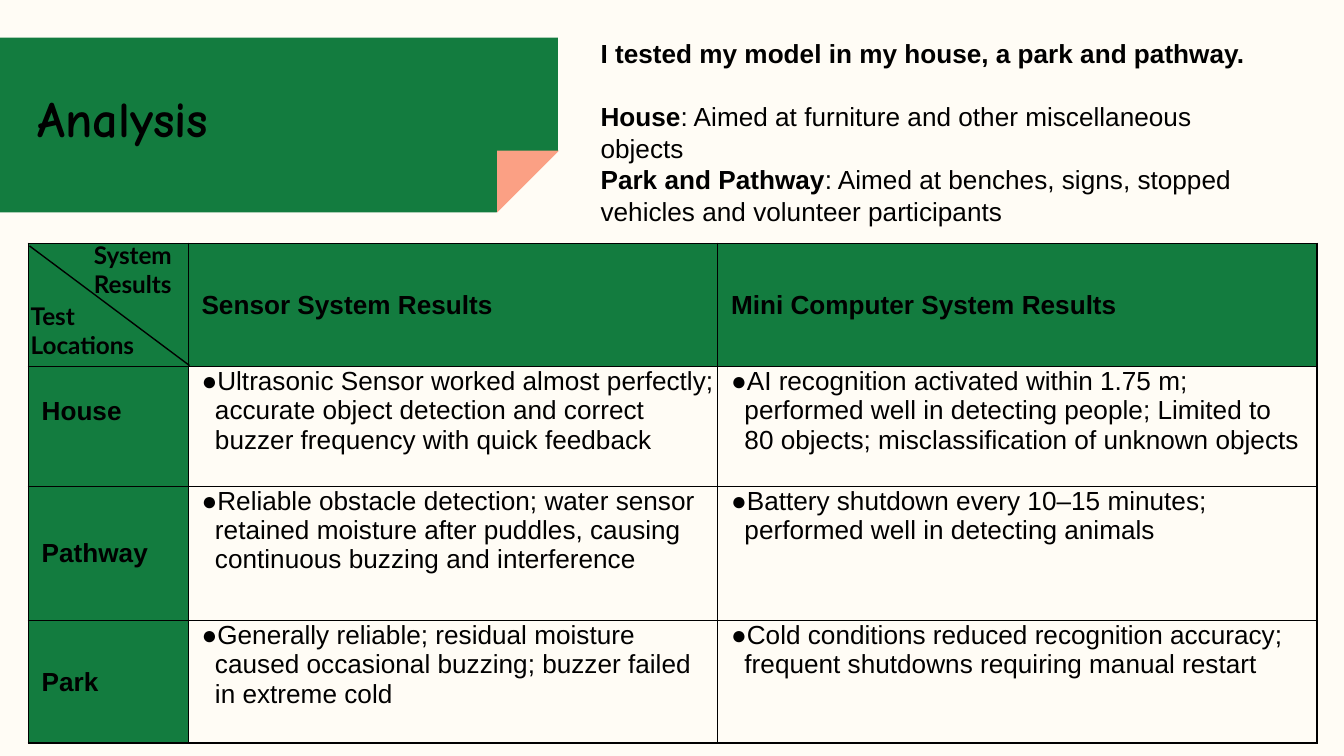
from lxml import etree
from pptx import Presentation
from pptx.dml.color import RGBColor
from pptx.enum.shapes import MSO_CONNECTOR, MSO_SHAPE
from pptx.enum.text import MSO_ANCHOR
from pptx.oxml.ns import qn
from pptx.util import Inches, Pt

SNIPPED, TRIANGLE = MSO_SHAPE.SNIP_1_RECTANGLE, MSO_SHAPE.RIGHT_TRIANGLE
STRAIGHT = MSO_CONNECTOR.STRAIGHT
TOP, MIDDLE = MSO_ANCHOR.TOP, MSO_ANCHOR.MIDDLE

CREAM = RGBColor(0xFF, 0xFC, 0xF5)
GREEN = RGBColor(0x13, 0x7C, 0x3F)
SALMON = RGBColor(0xFB, 0xA0, 0x84)
BLACK = RGBColor(0, 0, 0)

COLUMN_WIDTHS = [1.19, 3.94, 4.46]
ROW_HEIGHTS = [0.92, 0.89, 1, 0.91]
RESULTS = [
    ["", "Sensor System Results", "Mini Computer System Results"],
    ["House",
     "Ultrasonic Sensor worked almost perfectly; accurate object detection "
     "and correct buzzer frequency with quick feedback",
     "AI recognition activated within 1.75 m; performed well in detecting "
     "people; Limited to 80 objects; misclassification of unknown objects"],
    ["Pathway",
     "Reliable obstacle detection; water sensor retained moisture after "
     "puddles, causing continuous buzzing and interference",
     "Battery shutdown every 10–15 minutes; performed well in detecting animals"],
    ["Park",
     "Generally reliable; residual moisture caused occasional buzzing; "
     "buzzer failed in extreme cold",
     "Cold conditions reduced recognition accuracy; frequent shutdowns "
     "requiring manual restart"],
]
# Each line is a bold lead and its plain continuation
INTRO = [
    ("I tested my model in my house, a park and pathway.", ""),
    ("House", ": Aimed at furniture and other miscellaneous objects"),
    ("Park and Pathway", ": Aimed at benches, signs, stopped vehicles and "
     "volunteer participants"),
]


def style_font(font, size, name="Arial", bold=None):
    font.size, font.name, font.bold = Pt(size), name, bold
    font.color.rgb = BLACK


def set_margins(target, left=0.1, top=0.1, right=0.1, bottom=0.1):
    target.margin_left, target.margin_top = Inches(left), Inches(top)
    target.margin_right, target.margin_bottom = Inches(right), Inches(bottom)


def add_flipped_shape(slide, kind, left, top, width, height, color):
    """Turn a shape by 180 degrees and mirror it, so it stands upside down."""
    shape = slide.shapes.add_shape(
        kind, Inches(left), Inches(top), Inches(width), Inches(height))
    shape.shadow.inherit = False
    shape.fill.solid()
    shape.fill.fore_color.rgb = color
    shape.line.fill.background()
    shape.rotation = 180
    shape._element.spPr.find(qn("a:xfrm")).set("flipH", "1")
    return shape


def add_text_frame(slide, left, top, width, height):
    box = slide.shapes.add_textbox(
        Inches(left), Inches(top), Inches(width), Inches(height))
    frame = box.text_frame
    frame.word_wrap = True
    set_margins(frame)
    return frame


def add_label(slide, text, left, top, width, height, size, font_name):
    paragraph = add_text_frame(slide, left, top, width, height).paragraphs[0]
    paragraph.text = text
    style_font(paragraph.font, size, font_name, True)


def add_intro(slide):
    frame = add_text_frame(slide, 4.37, 0.18, 5.25, 1.69)
    for index, (lead, detail) in enumerate(INTRO):
        paragraph = frame.add_paragraph() if index else frame.paragraphs[0]
        if index == 1:
            paragraph.space_before = Pt(17)
        style_font(paragraph.font, 14)
        run = paragraph.add_run()
        run.text = lead
        run.font.bold = True
        if detail:
            paragraph.add_run().text = detail


def add_bullet(paragraph):
    properties = paragraph._p.get_or_add_pPr()
    properties.set("marL", str(Inches(0.1)))
    properties.set("indent", str(-Inches(0.15)))
    color = etree.SubElement(properties, qn("a:buClr"))
    etree.SubElement(color, qn("a:srgbClr"), val=str(BLACK))
    etree.SubElement(properties, qn("a:buFont"), typeface="Arial")
    etree.SubElement(properties, qn("a:buChar"), char="●")


def add_borders(cell):
    properties = cell._tc.get_or_add_tcPr()
    for index, side in enumerate(("lnL", "lnR", "lnT", "lnB")):
        line = etree.Element(qn("a:" + side), w=str(Pt(0.75)))
        fill = etree.SubElement(line, qn("a:solidFill"))
        etree.SubElement(fill, qn("a:srgbClr"), val=str(BLACK))
        properties.insert(index, line)


def fill_cell(cell, text, is_heading):
    paragraph = cell.text_frame.paragraphs[0]
    paragraph.text = text
    if is_heading:
        cell.fill.solid()
        cell.fill.fore_color.rgb = GREEN
        cell.vertical_anchor = MIDDLE
        set_margins(cell)
    else:
        cell.fill.background()
        cell.vertical_anchor = TOP
        set_margins(cell, top=0)
        add_bullet(paragraph)
    style_font(paragraph.font, 14, bold=is_heading)
    add_borders(cell)


def add_results_table(slide):
    table = slide.shapes.add_table(
        len(ROW_HEIGHTS), len(COLUMN_WIDTHS), Inches(0.21), Inches(1.81),
        Inches(sum(COLUMN_WIDTHS)), Inches(sum(ROW_HEIGHTS))).table
    table.horz_banding = False
    for column, width in zip(table.columns, COLUMN_WIDTHS):
        column.width = Inches(width)
    for row, height in zip(table.rows, ROW_HEIGHTS):
        row.height = Inches(height)
    for r, texts in enumerate(RESULTS):
        for c, text in enumerate(texts):
            fill_cell(table.cell(r, c), text, r == 0 or c == 0)
    # The house row sits a little higher and its first result runs to the edge
    table.cell(1, 0).margin_bottom = Inches(0.32)
    set_margins(table.cell(1, 1), top=0, right=0, bottom=0)


def add_diagonal(slide):
    diagonal = slide.shapes.add_connector(
        STRAIGHT, Inches(0.22), Inches(1.83), Inches(1.41), Inches(2.72))
    diagonal.line.color.rgb = BLACK
    diagonal.line.width = Pt(0.75)
    etree.SubElement(diagonal._element.spPr, qn("a:effectLst"))


def main():
    prs = Presentation()
    # Widescreen, 16 to 9
    prs.slide_width, prs.slide_height = Inches(10), Inches(10 * 9 / 16)
    slide = prs.slides.add_slide(prs.slide_layouts[6])
    slide.background.fill.solid()
    slide.background.fill.fore_color.rgb = CREAM

    # Title banner with a folded corner
    banner = add_flipped_shape(slide, SNIPPED, 0, 0.28, 4.15, 1.3, GREEN)
    banner.adjustments[0] = 0.35
    add_flipped_shape(slide, TRIANGLE, 3.7, 1.12, 0.46, 0.46, SALMON)
    add_label(slide, "Analysis", 0.18, 0.55, 7.3, 0.6, 27, "Comic Neue")

    # Test summary
    add_intro(slide)

    # Results, with a split corner cell
    add_results_table(slide)
    add_diagonal(slide)
    add_label(slide, "System Results", 0.6, 1.69, 1.18, 0.43, 13, "Lato")
    add_label(slide, "Test Locations", 0.13, 2.14, 1.18, 0.43, 13, "Lato")

    prs.save("out.pptx")


if __name__ == "__main__":
    main()
